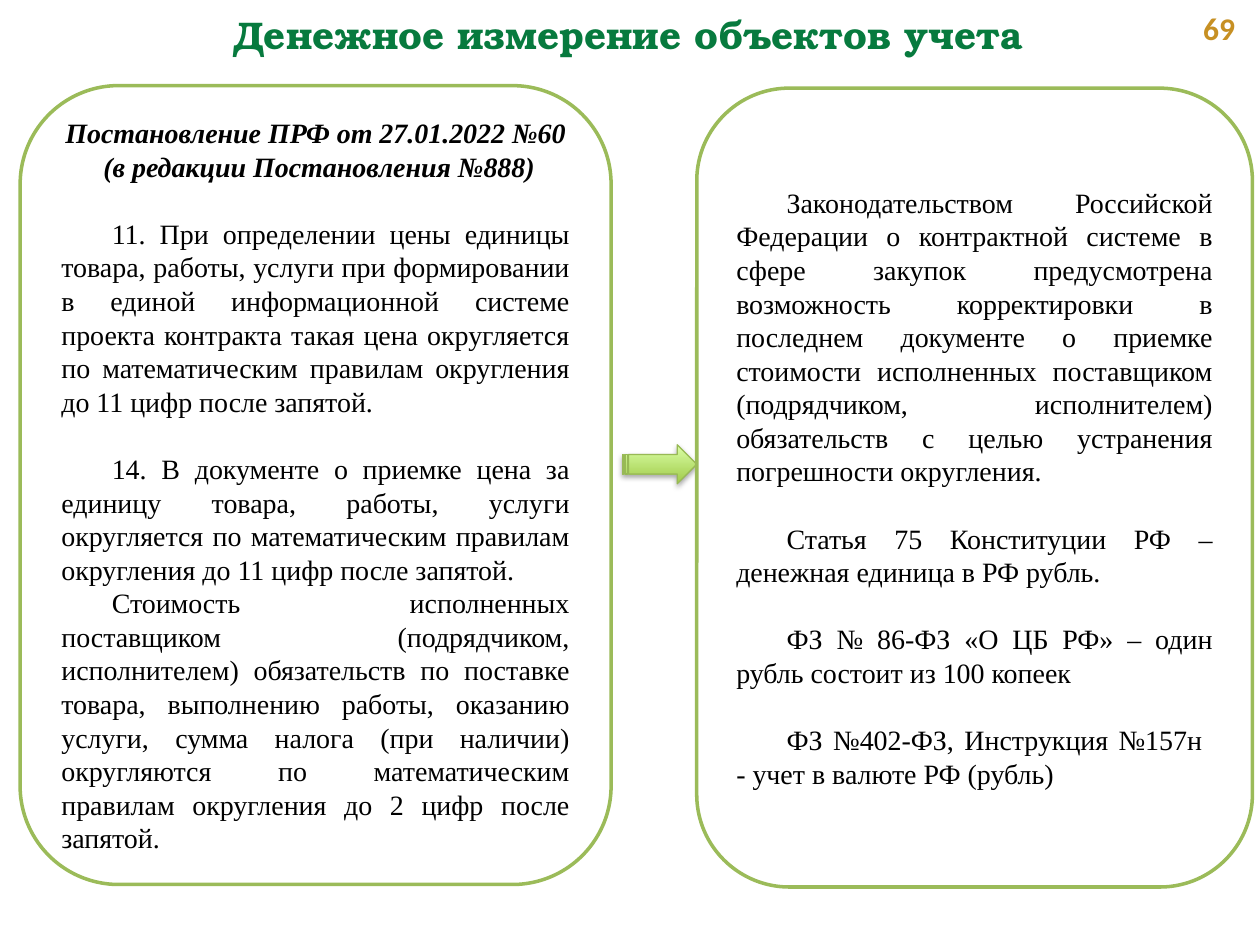
from lxml import etree
from pptx import Presentation
from pptx.dml.color import RGBColor
from pptx.enum.shapes import MSO_SHAPE
from pptx.enum.text import MSO_ANCHOR, PP_ALIGN
from pptx.oxml.ns import qn
from pptx.util import Inches, Pt

ROUNDED = MSO_SHAPE.ROUNDED_RECTANGLE
STRIPED_ARROW = MSO_SHAPE.STRIPED_RIGHT_ARROW
CENTER, JUSTIFY, LEFT = PP_ALIGN.CENTER, PP_ALIGN.JUSTIFY, PP_ALIGN.LEFT
TOP, MIDDLE = MSO_ANCHOR.TOP, MSO_ANCHOR.MIDDLE

COLORS = {
    "title": "077A3E",
    "number": "C79023",
    "text": "000000",
    "panel": "FFFFFF",
    "border": "9BBB59",
    "arrow_dark": "A0CA4A",
    "arrow_light": "DAFFA5",
    "arrow_border": "98B955",
    "shadow": "000000",
}
LINE_HEIGHT = Pt(19.2)

DECREE_HEADING = [
    "Постановление ПРФ от 27.01.2022 №60",
    " (в редакции Постановления №888)",
]
DECREE_RULES = [
    ("11. При определении цены единицы товара, работы, услуги при формировании "
     "в единой информационной системе проекта контракта такая цена округляется "
     "по математическим правилам округления до 11 цифр после запятой.", True),
    ("14. В документе о приемке цена за единицу товара, работы, услуги "
     "округляется по математическим правилам округления до 11 цифр после запятой.", True),
    ("Стоимость исполненных поставщиком (подрядчиком, исполнителем) обязательств "
     "по поставке товара, выполнению работы, оказанию услуги, сумма налога "
     "(при наличии) округляются по математическим правилам округления "
     "до 2 цифр после запятой.", False),
]
LAW_RULES = [
    ("Законодательством Российской Федерации о контрактной системе в сфере закупок "
     "предусмотрена возможность корректировки в последнем документе о приемке "
     "стоимости исполненных поставщиком (подрядчиком, исполнителем) обязательств "
     "с целью устранения погрешности округления.", False),
    ("Статья 75 Конституции РФ –денежная единица в РФ рубль. ", True),
    ("ФЗ № 86-ФЗ «О ЦБ РФ» – один рубль состоит из 100 копеек", True),
    ("ФЗ №402-ФЗ, Инструкция №157н  - учет в валюте РФ (рубль) ", True),
]


def rgb(name):
    return RGBColor.from_string(COLORS[name])


def style(paragraph, font_name, size, color, align, bold=False, italic=False):
    paragraph.alignment = align
    font = paragraph.font
    font.name, font.size = font_name, Pt(size)
    font.bold, font.italic = bold, italic
    font.color.rgb = rgb(color)


def add_title(slide, text):
    title = slide.shapes.title
    title.left, title.top = Inches(0.12), Inches(0.09)
    title.width, title.height = Inches(9.73), Inches(0.37)
    frame = title.text_frame
    frame.margin_left = frame.margin_right = frame.margin_top = frame.margin_bottom = 0
    frame.vertical_anchor = TOP
    frame.text = text
    style(frame.paragraphs[0], "TeX Gyre Bonum", 22, "title", CENTER, bold=True)


def add_page_number(slide, text):
    number = slide.shapes.add_textbox(Inches(9.45), Inches(0.02), Inches(0.49), Inches(0.4))
    frame = number.text_frame
    frame.word_wrap = True
    frame.text = text
    style(frame.paragraphs[0], "Calibri", 18, "number", LEFT, bold=True)


def add_panel(slide, left, top, width, heading, rules):
    panel = slide.shapes.add_shape(
        ROUNDED, Inches(left), Inches(top), Inches(width), Inches(6.34))
    panel.shadow.inherit = False
    panel.fill.solid()
    panel.fill.fore_color.rgb = rgb("panel")
    panel.line.color.rgb = rgb("border")
    panel.line.width = Pt(2)
    frame = panel.text_frame
    frame.word_wrap = True
    frame.vertical_anchor = MIDDLE
    frame.text = "\n".join(heading + [text for text, _ in rules])
    for paragraph in frame.paragraphs:
        paragraph.line_spacing = LINE_HEIGHT
    for paragraph in frame.paragraphs[:len(heading)]:
        style(paragraph, "Times New Roman", 16, "text", CENTER, bold=True, italic=True)
    for paragraph, (_, gap_before) in zip(frame.paragraphs[len(heading):], rules):
        style(paragraph, "Times New Roman", 16, "text", JUSTIFY)
        paragraph.space_before = LINE_HEIGHT if gap_before else Pt(0)
        properties = paragraph._p.get_or_add_pPr()
        properties.set("marL", "0")
        properties.set("indent", str(Inches(0.4)))


def add_drop_shadow(shape):
    shape.shadow.inherit = False
    effects = shape._element.spPr.find(qn("a:effectLst"))
    shadow = etree.SubElement(
        effects, qn("a:outerShdw"), blurRad=str(Pt(3.1)), dist=str(Pt(1.8)),
        dir="5400000", rotWithShape="0")
    color = etree.SubElement(shadow, qn("a:srgbClr"), val=COLORS["shadow"])
    etree.SubElement(color, qn("a:alpha"), val="35000")


def add_arrow(slide):
    arrow = slide.shapes.add_shape(
        STRIPED_ARROW, Inches(4.94), Inches(3.53), Inches(0.59), Inches(0.31))
    arrow.fill.gradient()
    arrow.fill.gradient_angle = 90
    for stop, color in zip(arrow.fill.gradient_stops, ("arrow_dark", "arrow_light")):
        stop.color.rgb = rgb(color)
    arrow.line.color.rgb = rgb("arrow_border")
    arrow.line.width = Pt(0.75)
    add_drop_shadow(arrow)


def main():
    presentation = Presentation()
    presentation.slide_width = Inches(10)
    presentation.slide_height = Inches(7.5)
    slide = presentation.slides.add_slide(presentation.slide_layouts[5])
    add_page_number(slide, "69")
    add_title(slide, "Денежное измерение объектов учета")
    add_panel(slide, 0.16, 0.68, 4.69, DECREE_HEADING, DECREE_RULES)
    add_arrow(slide)
    add_panel(slide, 5.53, 0.7, 4.41, [], LAW_RULES)
    presentation.save("out.pptx")


if __name__ == "__main__":
    main()
